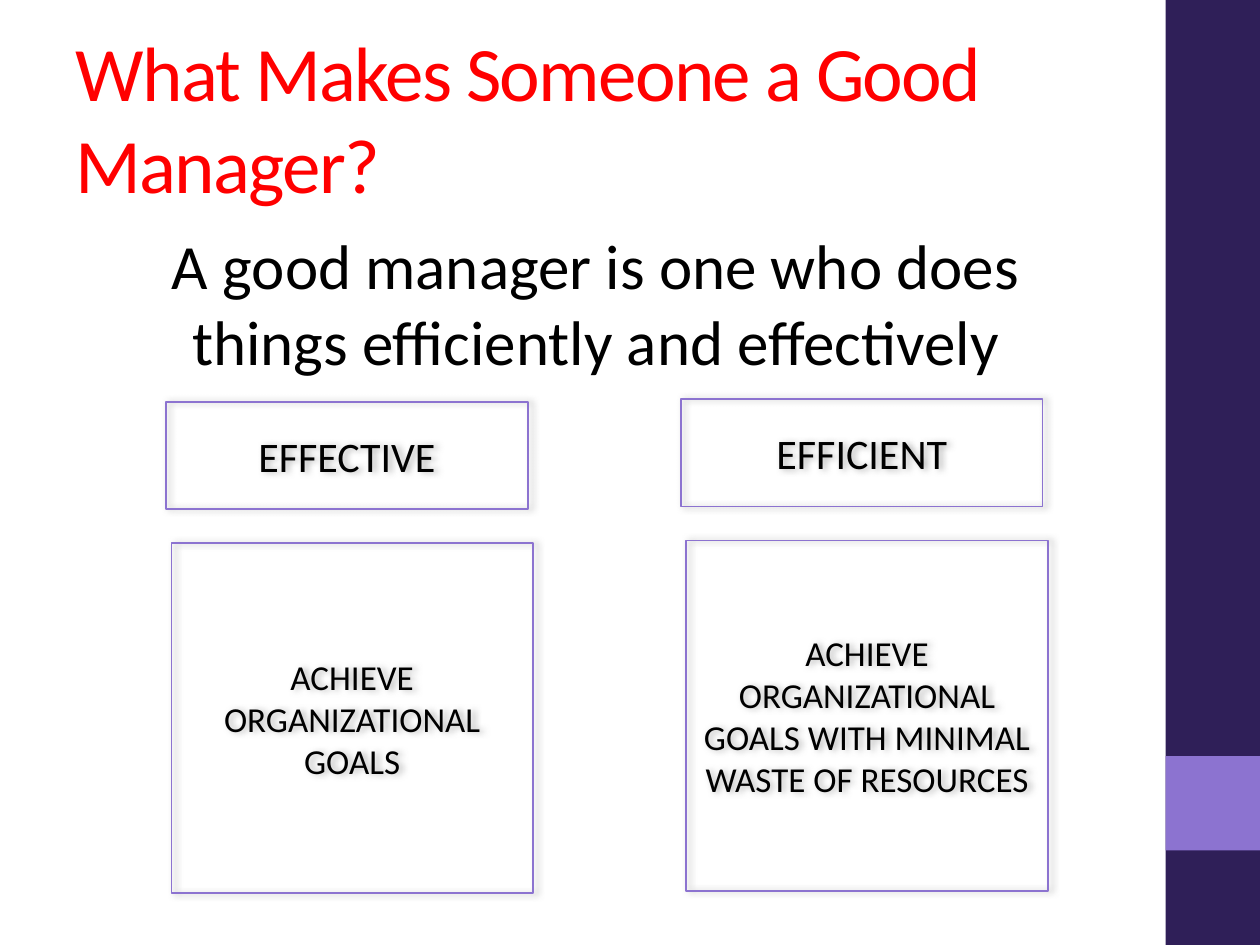
from lxml.etree import SubElement
from pptx import Presentation
from pptx.dml.color import RGBColor
from pptx.enum.shapes import MSO_SHAPE as Shape
from pptx.enum.text import MSO_ANCHOR as Anchor, MSO_AUTO_SIZE as AutoSize, PP_ALIGN as Align
from pptx.oxml.ns import qn
from pptx.util import Pt

COLOURS = {"title": "FF0000", "text": "000000", "dark": "2F1F58",
           "accent": "8C73D0", "shadow": "808080"}
FONT = "Calibri"

TITLE = "What Makes Someone a Good Manager?"
STATEMENT = "A good manager is one who does things efficiently and effectively"
QUALITIES = [
    ("EFFECTIVE", "ACHIEVE ORGANIZATIONAL GOALS"),
    ("EFFICIENT", "ACHIEVE ORGANIZATIONAL GOALS WITH MINIMAL WASTE OF RESOURCES"),
]

# Bands: left, top, width, height, colour
BANDS = [(666, 0, 54, 540, "dark"), (666, 432, 54, 54, "accent")]

# Rows of boxes: left and top of the first box, height, text size
ROWS = [(95, 229.7, 61.2, 24), (98, 310.3, 200.2, 20)]
BOX_WIDTH = 206.6
COLUMN_STEP, COLUMN_RISE = 294.2, 1.5


def colour(name):
    return RGBColor.from_string(COLOURS[name])


def place(shape, left, top, width, height):
    shape.left, shape.top, shape.width, shape.height = map(Pt, (left, top, width, height))


def write(shape, text, size, ink="text", align=Align.CENTER, anchor=Anchor.MIDDLE):
    frame = shape.text_frame
    frame.word_wrap = True
    frame.auto_size = AutoSize.NONE
    frame.vertical_anchor = anchor
    para = frame.paragraphs[0]
    para.alignment = align
    para.space_before = Pt(0)
    span = para.add_run()
    span.text = text
    span.font.name = FONT
    span.font.size = Pt(size)
    span.font.color.rgb = colour(ink)
    return para


def add_shadow(shape):
    """Give the shape a soft grey shadow to its right."""
    shape.shadow.inherit = False
    effects = shape._element.spPr.find(qn("a:effectLst"))
    outer = SubElement(effects, qn("a:outerShdw"), blurRad=str(Pt(4)),
                       dist=str(Pt(2)), dir="0", rotWithShape="0")
    tint = SubElement(outer, qn("a:srgbClr"), val=COLOURS["shadow"])
    SubElement(tint, qn("a:alpha"), val="60000")


def add_band(page, left, top, width, height, fill):
    band = page.shapes.add_shape(Shape.RECTANGLE, Pt(left), Pt(top), Pt(width), Pt(height))
    band.shadow.inherit = False
    band.fill.solid()
    band.fill.fore_color.rgb = colour(fill)
    band.line.fill.background()


def add_box(page, left, top, height, text, size):
    box = page.shapes.add_shape(Shape.RECTANGLE, Pt(left), Pt(top), Pt(BOX_WIDTH), Pt(height))
    box.fill.background()
    box.line.color.rgb = colour("accent")
    box.line.width = Pt(1)
    add_shadow(box)
    write(box, text, size)


def main():
    deck = Presentation()
    deck.slide_width, deck.slide_height = Pt(720), Pt(540)
    page = deck.slides.add_slide(deck.slide_layouts[1])

    for band in BANDS:
        add_band(page, *band)

    title, body = page.placeholders
    place(title, 36, 21.6, 600, 90)
    para = write(title, TITLE, 44, ink="title", align=Align.LEFT)
    para.runs[0].font._element.set("spc", "-100")

    place(body, 36, 126, 600, 114.5)
    para = write(body, STATEMENT, 36, anchor=Anchor.TOP)
    properties = para._p.get_or_add_pPr()
    properties.set("marL", str(Pt(8.64)))
    properties.set("indent", "0")
    SubElement(properties, qn("a:buNone"))

    for column, texts in enumerate(QUALITIES):
        for (left, top, height, size), text in zip(ROWS, texts):
            add_box(page, left + column * COLUMN_STEP, top - column * COLUMN_RISE,
                    height, text, size)

    deck.save("out.pptx")


if __name__ == "__main__":
    main()
